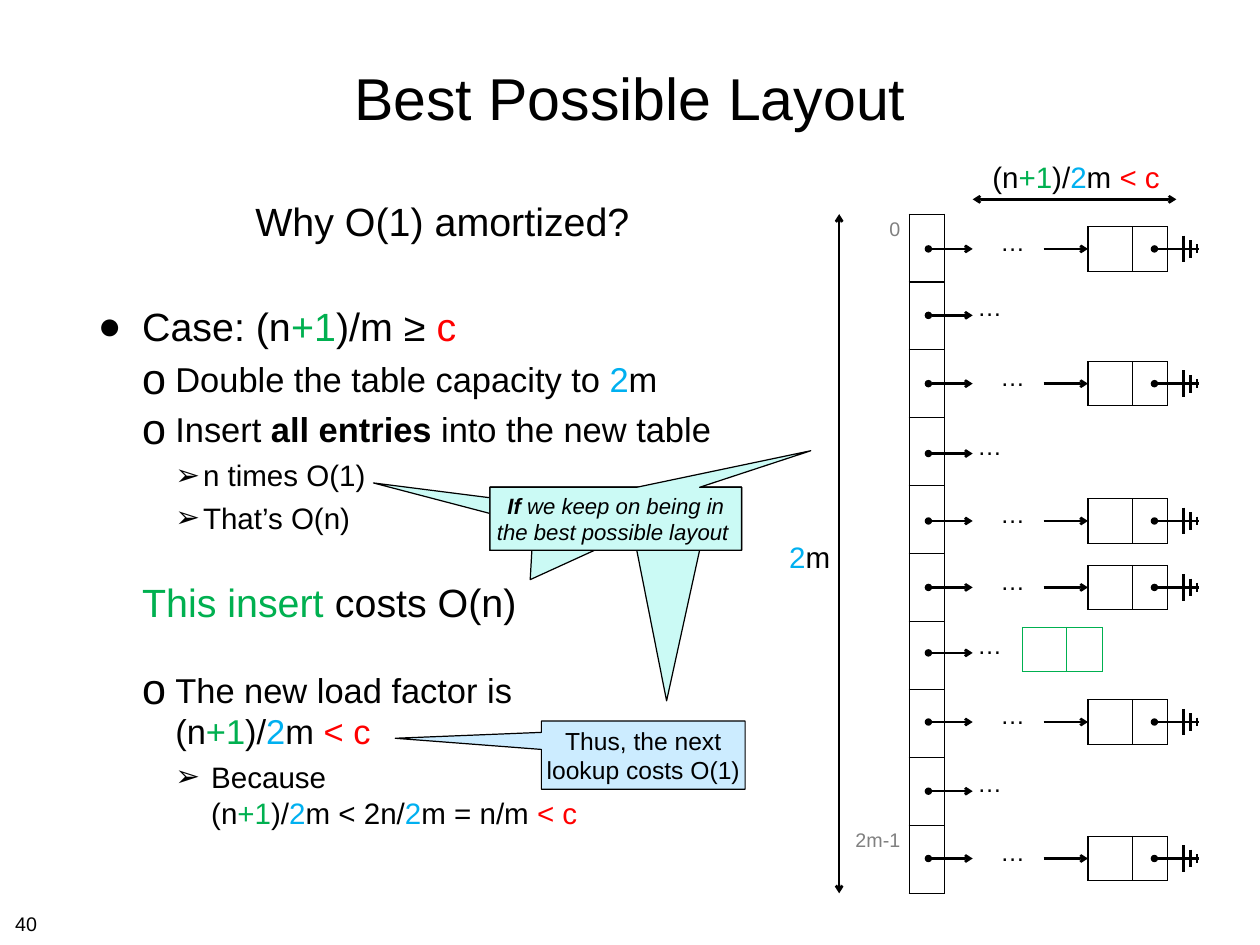
from dataclasses import dataclass
from typing import Optional

from lxml.etree import SubElement
from pptx import Presentation
from pptx.dml.color import RGBColor
from pptx.enum.shapes import MSO_CONNECTOR as Link, MSO_SHAPE as Preset
from pptx.enum.text import MSO_ANCHOR as Anchor, MSO_AUTO_SIZE as Fit, PP_ALIGN as Align
from pptx.oxml.ns import qn
from pptx.util import Pt

COLORS = {
    "black": "000000", "green": "00B050", "blue": "00B0F0", "red": "FF0000",
    "gray": "808080", "mint": "CBFAF5", "sky": "CCECFF",
}
FONT = "Arial"


@dataclass(frozen=True)
class Span:
    text: str
    color: str = "black"
    bold: bool = False
    italic: bool = False


@dataclass(frozen=True)
class Line:
    spans: tuple[Span, ...]
    size: float
    level: int
    margin: float
    indent: float
    before: float
    bullet: Optional[str] = None
    bullet_percent: int = 100


@dataclass(frozen=True)
class Chain:
    y: float
    full: bool


@dataclass(frozen=True)
class Tail:
    x: float
    y: float


PLUS_ONE = Span("+1", "green")
TWO = Span("2", "blue")
BELOW_C = Span("< c", "red")
NEW_LOAD = (Span("(n"), PLUS_ONE, Span(")/"), TWO, Span("m "), BELOW_C)

LINES = (
    Line((Span("Why O(1) amortized?"),), 32, 0, 128, 0, 8),
    Line((Span("Case: (n"), PLUS_ONE, Span(")/m ≥ "), Span("c", "red")), 32, 0, 36, -36, 47, "●"),
    Line((Span("Double the table capacity to "), TWO, Span("m")), 28, 1, 63, -27, 7, "o", 125),
    Line((Span("Insert "), Span("all entries ", bold=True), Span("into the new table")),
         28, 1, 63, -27, 7, "o", 125),
    Line((Span("n times O(1)"),), 24, 2, 85.5, -22.5, 6, "➢"),
    Line((Span("That’s O(n)"),), 24, 2, 85.5, -22.5, 6, "➢"),
    Line((Span("This insert ", "green"), Span("costs O(n)")), 32, 1, 63, -27, 35),
    Line((Span("The new load factor is\n"), *NEW_LOAD), 28, 1, 63, -27, 35, "o", 125),
    Line((Span(" Because\n (n"), PLUS_ONE, Span(")/"), TWO, Span("m < 2n/"), TWO,
          Span("m = n/m "), BELOW_C), 24, 2, 85.5, -22.5, 6, "➢"),
)

CHAINS = (
    Chain(202.3, True), Chain(256.3, False), Chain(311.8, True), Chain(368.6, False),
    Chain(423.4, True), Chain(477.4, True), Chain(530.6, False), Chain(586.8, True),
    Chain(643, False), Chain(697.7, True),
)
TAILS = (Tail(-0.963, -0.569), Tail(-0.34, 0.969), Tail(0.202, 2.896), Tail(0.775, -1.081))
BUCKETS = 10


def rgb(color: str) -> RGBColor:
    return RGBColor.from_string(COLORS[color])


def add_spans(para, spans: tuple[Span, ...], size: float) -> None:
    for span in spans:
        for index, piece in enumerate(span.text.split("\n")):
            if index:
                para.add_line_break()
            if piece:
                run = para.add_run()
                run.text = piece
                run.font.name, run.font.size = FONT, Pt(size)
                run.font.bold, run.font.italic = span.bold, span.italic
                run.font.color.rgb = rgb(span.color)


def set_insets(frame, inset: float) -> None:
    frame.margin_left = frame.margin_right = Pt(inset)
    frame.margin_top = frame.margin_bottom = Pt(inset)


def place(shape, left: float, top: float, width: float, height: float) -> None:
    shape.left, shape.top = Pt(left), Pt(top)
    shape.width, shape.height = Pt(width), Pt(height)


def add_bullet_line(para, line: Line) -> None:
    para.level = line.level
    para.alignment = Align.LEFT
    para.space_before = Pt(line.before)
    props = para._p.get_or_add_pPr()
    props.set("marL", str(Pt(line.margin)))
    props.set("indent", str(Pt(line.indent)))
    if line.bullet:
        SubElement(props, qn("a:buSzPct"), val=str(line.bullet_percent * 1000))
        SubElement(props, qn("a:buFont"), typeface=FONT)
        SubElement(props, qn("a:buChar"), char=line.bullet)
    else:
        SubElement(props, qn("a:buNone"))
    add_spans(para, line.spans, line.size)


def add_label(page, spans: tuple[Span, ...], size: float, left: float, top: float,
              width: float, height: float, align=Align.CENTER) -> None:
    box = page.shapes.add_textbox(Pt(left), Pt(top), Pt(width), Pt(height))
    box.text_frame.word_wrap = False
    box.text_frame.auto_size = Fit.SHAPE_TO_FIT_TEXT
    para = box.text_frame.paragraphs[0]
    para.alignment = align
    add_spans(para, spans, size)


def add_line(shapes, x1: float, y1: float, x2: float, y2: float,
             head: Optional[str] = None, tail: Optional[str] = None) -> None:
    link = shapes.add_connector(Link.STRAIGHT, Pt(x1), Pt(y1), Pt(x2), Pt(y2))
    link.line.color.rgb = rgb("black")
    link.line.width = Pt(2)
    stroke = link.line._get_or_add_ln()
    for tag, kind in (("a:headEnd", head), ("a:tailEnd", tail)):
        if kind:
            SubElement(stroke, qn(tag), type=kind)
    SubElement(link._element.spPr, qn("a:effectLst"))


def style_cell(cell, border: Optional[str]) -> None:
    props = cell._tc.get_or_add_tcPr()
    for side in "LRTB":
        edge = SubElement(props, qn(f"a:ln{side}"), w=str(Pt(1)))
        if border:
            fill = SubElement(edge, qn("a:solidFill"))
            SubElement(fill, qn("a:srgbClr"), val=COLORS[border])
        else:
            SubElement(edge, qn("a:noFill"))
    cell.fill.background()


def add_grid(page, left: float, top: float, widths: tuple[float, ...], rows: int,
             row_height: float, borders: tuple[Optional[str], ...]):
    grid = page.shapes.add_table(rows, len(widths), Pt(left), Pt(top),
                                 Pt(sum(widths)), Pt(rows * row_height)).table
    grid.first_row = grid.horz_banding = False
    for column, width in zip(grid.columns, widths):
        column.width = Pt(width)
    for row in grid.rows:
        row.height = Pt(row_height)
        for cell, border in zip(row.cells, borders):
            style_cell(cell, border)
    return grid


def add_node(page, left: float, top: float, color: str) -> None:
    add_grid(page, left, top, (36, 28.8), 1, 36, (color, color))


def add_chain(page, chain: Chain) -> None:
    y = chain.y
    add_line(page.shapes, 754.5, y, 790.5, y, "oval", "arrow")
    left, rise = (805.7, 21.2) if chain.full else (787, 22.3)
    add_label(page, (Span("…"),), 20, left, y - rise, 34.6, 31.7)
    if chain.full:
        add_node(page, 884.2, y - 18, "black")
        add_line(page.shapes, 848.2, y, 884.2, y, tail="arrow")
        ground = page.shapes.add_group_shape()
        add_line(ground.shapes, 938.2, y, 974.2, y, "oval")
        for x, half in ((961.9, 10.8), (967.5, 7.2), (973, 3.6)):
            add_line(ground.shapes, x, y - half, x, y + half)


def add_callout(page, left: float, top: float, width: float, height: float, fill: str,
                tail: Tail, spans: tuple[Span, ...], size: float) -> None:
    box = page.shapes.add_shape(Preset.RECTANGULAR_CALLOUT, Pt(left), Pt(top),
                                Pt(width), Pt(height))
    box.adjustments[0], box.adjustments[1] = tail.x, tail.y
    box.shadow.inherit = False
    box.fill.solid()
    box.fill.fore_color.rgb = rgb(fill)
    box.line.color.rgb = rgb("black")
    box.line.width = Pt(1)
    frame = box.text_frame
    frame.word_wrap = False
    frame.vertical_anchor = Anchor.MIDDLE
    set_insets(frame, 3.6)
    frame.paragraphs[0].alignment = Align.CENTER
    add_spans(frame.paragraphs[0], spans, size)


def main() -> None:
    deck = Presentation()
    deck.slide_width, deck.slide_height = Pt(1024), Pt(768)
    page = deck.slides.add_slide(deck.slide_layouts[1])

    title, body = page.shapes.title, page.placeholders[1]
    place(title, 75, 20, 874, 118)
    place(body, 75, 156, 874, 543)
    for holder in (title, body):
        set_insets(holder.text_frame, 4.5)
        holder.text_frame.auto_size = Fit.NONE
    title.text_frame.vertical_anchor = Anchor.MIDDLE
    title.text_frame.paragraphs[0].alignment = Align.CENTER
    add_spans(title.text_frame.paragraphs[0], (Span("Best Possible Layout"),), 48)
    for index, line in enumerate(LINES):
        frame = body.text_frame
        add_bullet_line(frame.add_paragraph() if index else frame.paragraphs[0], line)

    buckets = add_grid(page, 692, 174, (46.8, 28.8), BUCKETS, 55.2, (None, "black"))
    for row, label in ((0, "0"), (BUCKETS - 1, "2m-1")):
        cell = buckets.cell(row, 0)
        cell.margin_left = Pt(0)
        cell.text_frame.paragraphs[0].alignment = Align.RIGHT
        add_spans(cell.text_frame.paragraphs[0], (Span(label, "gray"),), 16)
    for chain in CHAINS:
        add_chain(page, chain)
    add_node(page, 830.9, 509.8, "green")

    add_line(page.shapes, 682, 174, 682, 726, "arrow", "arrow")
    add_label(page, (TWO, Span("m")), 24, 633.6, 434.2, 48.2, 36, Align.RIGHT)
    add_line(page.shapes, 956, 162, 790.5, 162, "arrow", "arrow")
    add_label(page, NEW_LOAD, 24, 798.5, 126, 152, 36)

    add_callout(page, 440, 586, 165.6, 55.4, "sky", Tail(-1.217, -0.247),
                (Span("Thus, the next\nlookup costs O(1)"),), 20)
    condition = (Span("If", bold=True, italic=True),
                 Span(" we keep on being in\nthe best possible layout ", italic=True))
    for tail in TAILS:
        add_callout(page, 398.2, 396, 204.5, 51.1, "mint", tail,
                    condition if tail is TAILS[-1] else (), 18)

    add_label(page, (Span("40"),), 16, 5.2, 737.5, 32, 25, Align.LEFT)
    deck.save("out.pptx")


if __name__ == "__main__":
    main()
